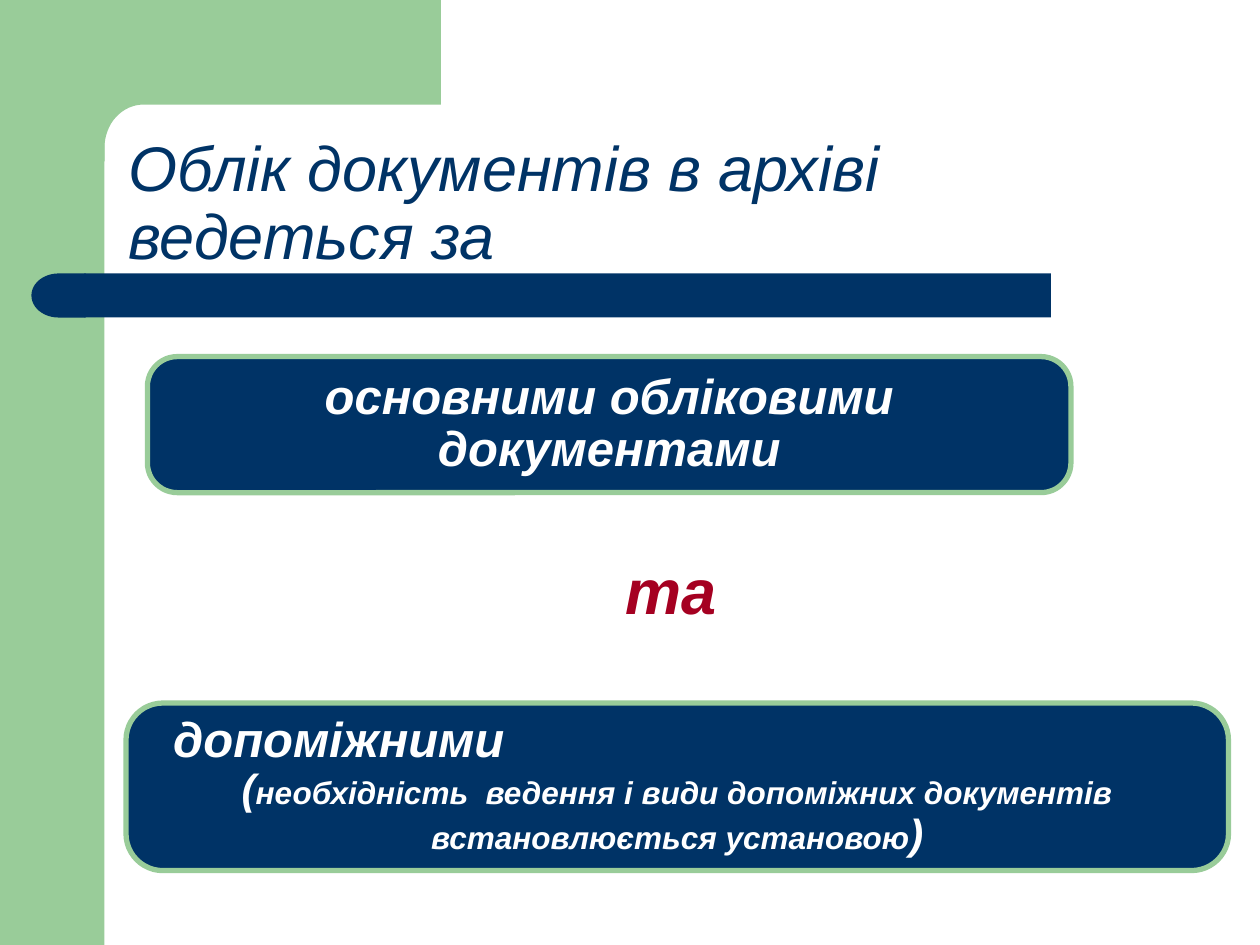
import math

import pptx
import pptx.dml.color
import pptx.enum.shapes
import pptx.enum.text
import pptx.oxml.ns
import pptx.util

Inches = pptx.util.Inches
Pt = pptx.util.Pt
SHAPES = pptx.enum.shapes.MSO_SHAPE
ALIGN = pptx.enum.text.PP_ALIGN
ANCHOR = pptx.enum.text.MSO_ANCHOR

GREEN, NAVY, RED, WHITE = "99CC99", "003366", "A50021", "FFFFFF"

# Content: each paragraph is a list of (text, size) runs
TITLE = [[("Облік документів в архіві ведеться за", 36)]]
CONJUNCTION = [[("та", 36)]]
MAIN_RECORDS = [[("основними обліковими документами", 28)]]
AUXILIARY_RECORDS = [
    [("допоміжними", 28)],
    [("(", 24),
     ("необхідність  ведення і види допоміжних документів встановлюється установою", 18),
     (")", 24)],
]
CARDS = [
    ((1.17, 2.83, 7.33, 1.08), MAIN_RECORDS),
    ((1, 5.58, 8.75, 1.33), AUXILIARY_RECORDS),
]


def rgb(color):
    return pptx.dml.color.RGBColor.from_string(color)


def paint(shape, fill, line=None):
    shape.shadow.inherit = False
    shape.fill.solid()
    shape.fill.fore_color.rgb = rgb(fill)
    if line:
        shape.line.color.rgb = rgb(line)
        shape.line.width = Pt(3)
    else:
        shape.line.fill.background()


def add_block(slide, kind, box, fill, line=None):
    shape = slide.shapes.add_shape(kind, *map(Inches, box))
    paint(shape, fill, line)
    return shape


def write(shape, paragraphs, color, align, anchor, bold=True, spacing=0.9):
    frame = shape.text_frame
    frame.word_wrap = True
    frame.vertical_anchor = anchor
    for index, runs in enumerate(paragraphs):
        paragraph = frame.add_paragraph() if index else frame.paragraphs[0]
        paragraph.alignment = align
        paragraph.line_spacing = spacing
        for text, size in runs:
            run = paragraph.add_run()
            run.text = text
            run.font.name = "Arial"
            run.font.size = Pt(size)
            run.font.bold = bold
            run.font.italic = True
            run.font.color.rgb = rgb(color)


def add_corner(slide):
    """Green top band whose inner corner is a quarter ellipse."""
    left, right, top, bottom = 0.83, 3.5, 0.83, 1.28
    radius_x, radius_y, steps = 0.31, 0.34, 16
    angles = [math.pi / 2 * step / steps for step in range(steps + 1)]
    arc = [(left + radius_x * (1 - math.sin(angle)),
            top + radius_y * (1 - math.cos(angle))) for angle in angles]
    points = [(right, top), *arc, (left, bottom), (0.5, bottom), (0.5, 0)]
    builder = slide.shapes.build_freeform(Inches(right), 0)
    builder.add_line_segments([(Inches(x), Inches(y)) for x, y in points], close=True)
    paint(builder.convert_to_shape(), GREEN)


def main():
    presentation = pptx.Presentation()
    presentation.slide_width, presentation.slide_height = Inches(10), Inches(7.5)
    slide = presentation.slides.add_slide(presentation.slide_layouts[6])

    # Green frame
    add_block(slide, SHAPES.RECTANGLE, (0, 0, 0.83, 7.5), GREEN)
    add_corner(slide)

    # Navy bar with a rounded left end
    add_block(slide, SHAPES.RECTANGLE, (0.67, 2.17, 7.67, 0.35), NAVY)
    bar_end = add_block(slide, SHAPES.FLOWCHART_DELAY, (0.25, 2.17, 0.43, 0.35), NAVY)
    bar_end.element.spPr.find(pptx.oxml.ns.qn("a:xfrm")).set("flipH", "1")

    # Title and conjunction
    title = slide.shapes.add_textbox(*map(Inches, (0.92, 1, 7.5, 1.25)))
    write(title, TITLE, NAVY, ALIGN.LEFT, ANCHOR.MIDDLE, bold=False)
    conjunction = slide.shapes.add_textbox(*map(Inches, (3.83, 4.33, 3, 0.7)))
    write(conjunction, CONJUNCTION, RED, ALIGN.CENTER, ANCHOR.TOP, spacing=1)
    conjunction.text_frame.paragraphs[0].space_before = Pt(18)

    # Cards
    for box, paragraphs in CARDS:
        card = add_block(slide, SHAPES.ROUNDED_RECTANGLE, box, NAVY, GREEN)
        card.adjustments[0] = 0.22
        write(card, paragraphs, WHITE, ALIGN.CENTER, ANCHOR.MIDDLE)

    # The last card opens with an indented left-aligned line
    opening = card.text_frame.paragraphs[0]
    opening.alignment = ALIGN.LEFT
    opening._p.get_or_add_pPr().set("indent", str(Inches(0.19)))

    presentation.save("out.pptx")


if __name__ == "__main__":
    main()
